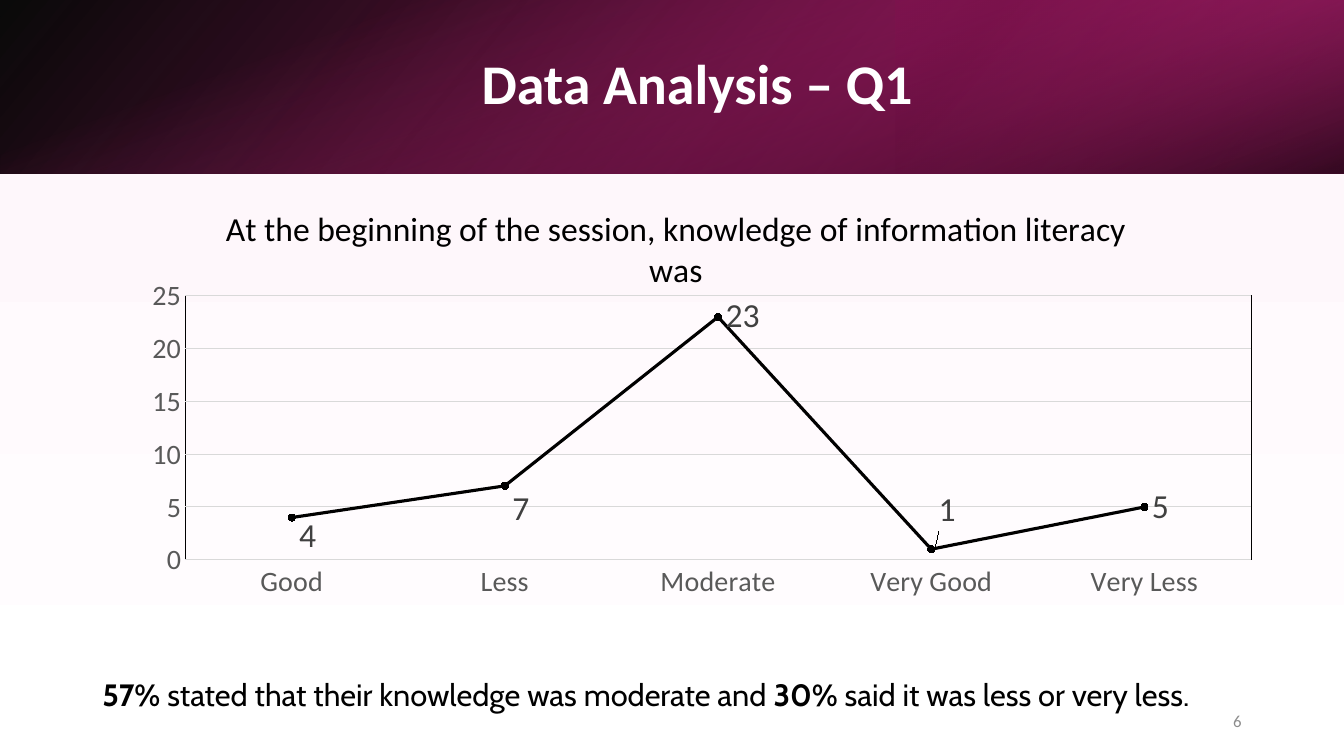
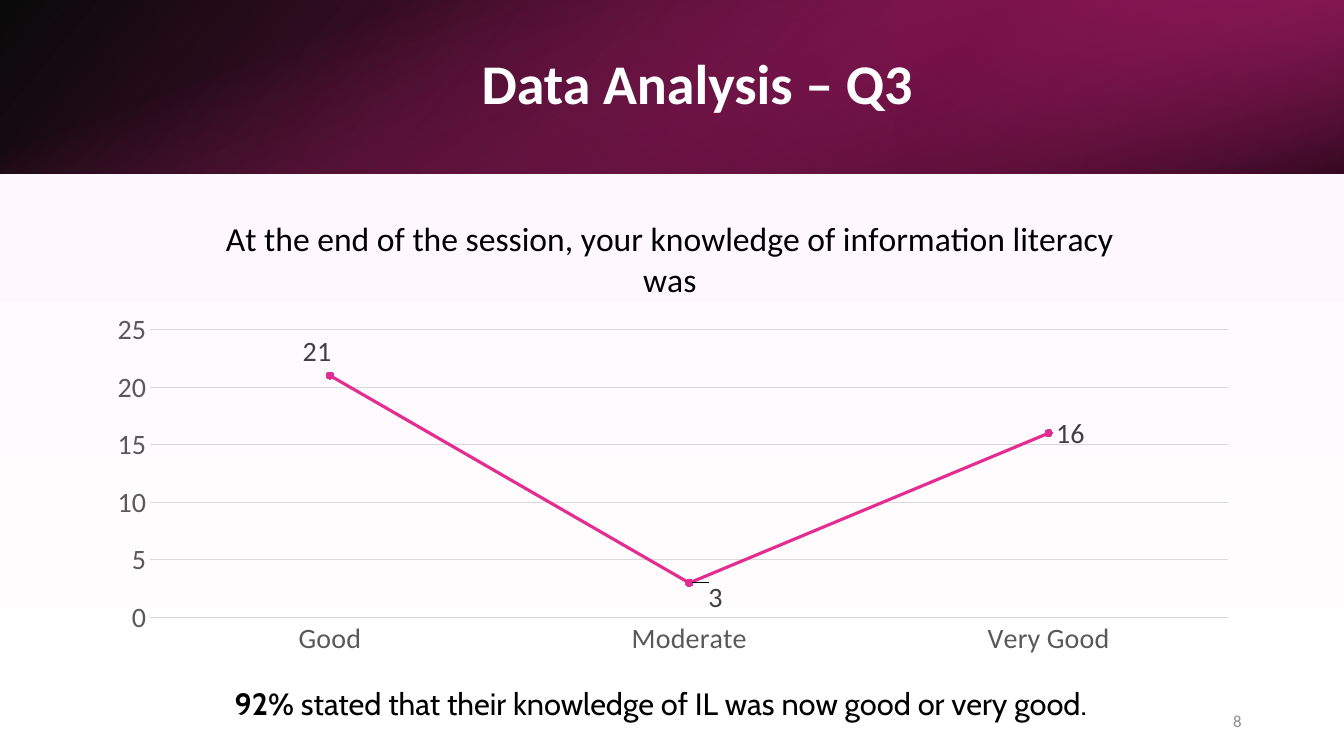
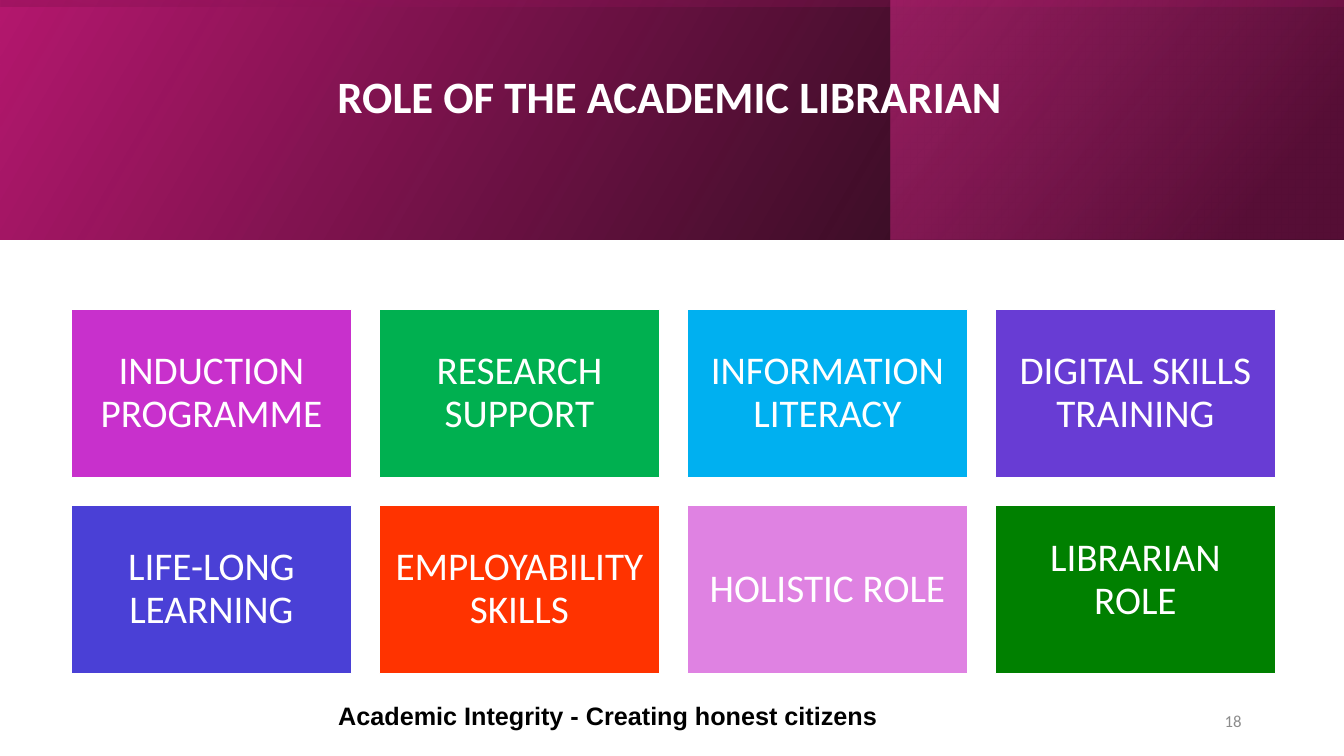
from lxml.etree import SubElement
from pptx import Presentation
from pptx.chart.data import CategoryChartData
from pptx.dml.color import RGBColor
from pptx.enum.chart import XL_CHART_TYPE as ChartType
from pptx.enum.chart import XL_LABEL_POSITION as LabelPosition
from pptx.enum.chart import XL_MARKER_STYLE as MarkerStyle
from pptx.enum.chart import XL_TICK_MARK as TickMark
from pptx.enum.shapes import MSO_SHAPE as Preset
from pptx.enum.text import MSO_ANCHOR as Anchor
from pptx.enum.text import MSO_AUTO_SIZE as AutoSize
from pptx.enum.text import PP_ALIGN as Align
from pptx.oxml import parse_xml
from pptx.oxml.ns import nsdecls, qn
from pptx.util import Pt

WIDTH, HEIGHT = 960, 540
TITLE_ONLY = 5

# Header overlays: two (position, colour, opacity) stops, then the angle
BASE_STOPS = [(0, "000000", 96), (100, "B4186E", 100)]
CHART_HEADER = {
    "height": 124,
    "base": (BASE_STOPS, 140),
    "side": (640, 180, [(19, "781049", 68), (100, "E32D91", 79)], 320),
    "shade": (90, False, [(23, "E32D91", 0), (99, "000000", 74)], 340),
}
ROLE_HEADER = {
    "height": 171,
    "base": (BASE_STOPS, 330),
    "side": (636, 0, [(19, "781049", 68), (100, "E32D91", 48)], 320),
    "shade": (270, True, [(23, "B4186E", 16), (99, "000000", 45)], 350),
}


def color(value):
    return RGBColor.from_string(value)


def apply_gradient(fill, stops, angle):
    """Fill with two stops; the angle runs clockwise."""
    fill.gradient()
    fill.gradient_angle = 360 - angle
    for stop, (position, value, _) in zip(fill.gradient_stops, stops):
        stop.position = position / 100
        stop.color.rgb = color(value)


def set_layout(parent, index, **values):
    """Give a chart part a manual layout, in fractions of the chart."""
    layout = parent.find(qn("c:layout"))
    if layout is None:
        layout = parse_xml(f"<c:layout {nsdecls('c')}/>")
        parent.insert(index, layout)
    for child in list(layout):
        layout.remove(child)
    manual = SubElement(layout, qn("c:manualLayout"))
    for name, value in values.items():
        SubElement(manual, qn(f"c:{name}")).set("val", str(value))


class Deck:
    font = "Calibri"
    black, white = "000000", "FFFFFF"
    axis_color, grid_color = "595959", "D9D9D9"
    label_color, number_color = "404040", "8C8C8C"

    def __init__(self):
        self.presentation = Presentation()
        self.presentation.slide_width = Pt(WIDTH)
        self.presentation.slide_height = Pt(HEIGHT)
        self.slide = None

    def set_font(self, font, size, value, bold=False, name=None):
        font.name = name or self.font
        font.size = Pt(size)
        font.bold = bold
        font.color.rgb = color(value)

    def add_slide(self, title, title_box, title_size, header, number, tinted=True):
        layout = self.presentation.slide_layouts[TITLE_ONLY]
        self.slide = self.presentation.slides.add_slide(layout)
        fill = self.slide.background.fill
        if tinted:
            apply_gradient(fill, [(0, "FEF4FA", 100), (100, "FFFFFF", 100)], 90)
        else:
            fill.solid()
            fill.fore_color.rgb = color(self.white)
        self.header(header)
        self.title(title, title_box, title_size)
        self.text([(str(number), False)], (678, 500, 216, 29), 12,
                  self.number_color, align=Align.RIGHT, anchor=Anchor.MIDDLE)

    def rectangle(self, box):
        shape = self.slide.shapes.add_shape(Preset.RECTANGLE, *map(Pt, box))
        shape.shadow.inherit = False
        return shape

    def overlay(self, box, stops, angle, rotation=0, flipped=True):
        shape = self.rectangle(box)
        shape.line.fill.background()
        shape.rotation = rotation
        apply_gradient(shape.fill, stops, angle)
        properties = shape._element.spPr
        if flipped:
            properties.find(qn("a:xfrm")).set("flipH", "1")
        for element, stop in zip(properties.iter(qn("a:srgbClr")), stops):
            SubElement(element, qn("a:alpha")).set("val", str(stop[2] * 1000))

    def header(self, header):
        height = header["height"]
        self.overlay((0, 0, WIDTH, height), *header["base"])
        left, rotation, stops, angle = header["side"]
        self.overlay((left, 0, WIDTH - left, height), stops, angle, rotation)
        # The shade is a tall bar turned on its side
        rotation, flipped, stops, angle = header["shade"]
        offset = (WIDTH - height) / 2
        self.overlay((offset, -offset, height, WIDTH), stops, angle, rotation, flipped)

    def title(self, text, box, size):
        title = self.slide.shapes.title
        title.left, title.top, title.width, title.height = map(Pt, box)
        frame = title.text_frame
        frame.text = text
        frame.auto_size = AutoSize.NONE
        frame.vertical_anchor = Anchor.MIDDLE
        paragraph = frame.paragraphs[0]
        paragraph.alignment = Align.CENTER
        paragraph.line_spacing = 0.9
        self.set_font(paragraph.font, size, self.white, bold=True)
        # Bring the title in front of the header
        self.slide.shapes._spTree.append(title._element)

    def text(self, runs, box, size, value=black, name=None, align=Align.LEFT,
             anchor=Anchor.TOP, line_spacing=1.0):
        frame = self.slide.shapes.add_textbox(*map(Pt, box)).text_frame
        frame.word_wrap = True
        frame.vertical_anchor = anchor
        paragraph = frame.paragraphs[0]
        paragraph.alignment = align
        paragraph.line_spacing = line_spacing
        self.set_font(paragraph.font, size, value, name=name)
        for content, bold in runs:
            run = paragraph.add_run()
            run.text = content
            run.font.bold = bold

    def finding(self, runs, box):
        self.text(runs, box, 22, name="Cabin", line_spacing=1.07)

    def tile(self, text, box, fill, extra_bottom=0):
        shape = self.rectangle(box)
        shape.fill.solid()
        shape.fill.fore_color.rgb = color(fill)
        shape.line.color.rgb = color(self.white)
        shape.line.width = Pt(1)
        frame = shape.text_frame
        frame.word_wrap = True
        frame.vertical_anchor = Anchor.MIDDLE
        frame.margin_left = frame.margin_right = frame.margin_top = Pt(8.4)
        frame.margin_bottom = Pt(8.4 + extra_bottom)
        frame.text = text
        paragraph = frame.paragraphs[0]
        paragraph.alignment = Align.CENTER
        paragraph.line_spacing = 0.9
        self.set_font(paragraph.font, 28, self.white)

    def line_chart(self, title, values, top, plot_box, title_top, line_color,
                   label_size, label_shifts, black_points=(), framed=False):
        data = CategoryChartData()
        data.categories = list(values)
        data.add_series("Series 1", list(values.values()))
        chart = self.slide.shapes.add_chart(
            ChartType.LINE_MARKERS, Pt(66), Pt(top), Pt(828), Pt(343), data).chart
        self.set_font(chart.font, 10, self.black)
        chart.has_legend = False

        # Title
        chart.has_title = True
        chart_title = chart.chart_title
        chart_title.text_frame.text = title
        self.set_font(chart_title.text_frame.paragraphs[0].font, 24, self.black)
        set_layout(chart_title._element, 1, xMode="edge", yMode="edge",
                   x=0.11, y=title_top)

        # Axes
        for axis in (chart.category_axis, chart.value_axis):
            axis.major_tick_mark = axis.minor_tick_mark = TickMark.NONE
            self.set_font(axis.tick_labels.font, 20, self.axis_color)
        value_axis = chart.value_axis
        value_axis.minimum_scale, value_axis.maximum_scale = 0, 25
        value_axis.major_unit = 5
        value_axis.format.line.fill.background()
        for line in (chart.category_axis.format.line,
                     value_axis.major_gridlines.format.line):
            line.color.rgb = color(self.grid_color)
            line.width = Pt(0.75)

        # Plot area and its frame
        plot_area = chart._chartSpace.chart.plotArea
        x, y, w, h = plot_box
        set_layout(plot_area, 0, layoutTarget="inner", xMode="edge", yMode="edge",
                   x=x, y=y, w=w, h=h)
        outline = ('<a:solidFill><a:srgbClr val="000000"/></a:solidFill>'
                   if framed else "<a:noFill/>")
        plot_area.append(parse_xml(
            f"<c:spPr {nsdecls('c', 'a')}><a:noFill/><a:ln>{outline}</a:ln></c:spPr>"))

        # Series, markers and labels
        plot = chart.plots[0]
        plot.vary_by_categories = False
        series = plot.series[0]
        series.smooth = False
        series.format.line.color.rgb = color(line_color)
        series.format.line.width = Pt(2.25)
        self.marker(series.marker, line_color)
        for index in black_points:
            self.marker(series.points[index].marker, self.black)
        labels = series.data_labels
        labels.show_value = True
        labels.position = LabelPosition.RIGHT
        self.set_font(labels.font, label_size, self.label_color)
        for index, (x, y) in label_shifts.items():
            label = series.points[index].data_label
            self.set_font(label.font, label_size, self.label_color)
            label.position = LabelPosition.RIGHT
            element = labels._element.xpath(f"c:dLbl[c:idx/@val='{index}']")[0]
            set_layout(element, 1, x=x, y=y)

    def marker(self, marker, value):
        marker.style = MarkerStyle.CIRCLE
        marker.size = 5
        marker.format.fill.solid()
        marker.format.fill.fore_color.rgb = color(value)
        marker.format.line.color.rgb = color(value)


def main():
    deck = Deck()
    chart_title_box = (103, 27, 790, 69)

    # Knowledge before the session
    deck.add_slide("Data Analysis – Q1", chart_title_box, 40, CHART_HEADER, 6)
    deck.line_chart(
        "At the beginning of the session, knowledge of information literacy was",
        {"Good": 4, "Less": 7, "Moderate": 23, "Very Good": 1, "Very Less": 5},
        top=129, plot_box=(0.08, 0.24, 0.92, 0.55), title_top=0.04,
        line_color="000000", label_size=24,
        label_shifts={0: (0, 0.04), 1: (0, 0.05), 3: (0, -0.08)}, framed=True)
    deck.finding([("57% ", True),
                  ("stated that their knowledge was moderate and ", False),
                  ("30%", True),
                  (" said it was less or very less.", False)], (66, 477, 869, 35))

    # Knowledge after the session
    deck.add_slide("Data Analysis – Q3", chart_title_box, 40, CHART_HEADER, 8)
    deck.line_chart(
        "At the end of the session, your knowledge of information literacy was",
        {"Good": 21, "Moderate": 3, "Very Good": 16},
        top=132.5, plot_box=(0.05, 0.3, 0.93, 0.6), title_top=0.05,
        line_color="E32D91", label_size=20,
        label_shifts={0: (-0.03, -0.05), 1: (0.01, 0.03)}, black_points=(1, 2))
    deck.finding([("92% ", True),
                  ("stated that their knowledge of IL was now good or very good.",
                   False)], (160.5, 484, 687, 35))

    # Roles in a grid of four columns
    deck.add_slide("ROLE OF THE ACADEMIC LIBRARIAN", (37, 27, 883, 88), 32,
                   ROLE_HEADER, 18, tinted=False)
    roles = [
        ("INDUCTION PROGRAMME", "C830CC"), ("RESEARCH SUPPORT", "00B050"),
        ("INFORMATION LITERACY", "00B0F0"), ("DIGITAL SKILLS TRAINING", "683CD4"),
        ("LIFE-LONG LEARNING", "4A40D6"), ("EMPLOYABILITY SKILLS", "FF3300"),
        ("HOLISTIC ROLE", "DF82E2"), ("LIBRARIAN ROLE", "008000"),
    ]
    for index, (role, fill) in enumerate(roles):
        row, column = divmod(index, 4)
        box = (51 + 220 * column, 221 + 140 * row, 200, 120)
        deck.tile(role, box, fill, extra_bottom=13 if role == "LIBRARIAN ROLE" else 0)
    deck.text([("Academic Integrity - Creating honest citizens", True)],
              (234.5, 497, 434, 29), 18, name="Arial")

    deck.presentation.save("out.pptx")


if __name__ == "__main__":
    main()
